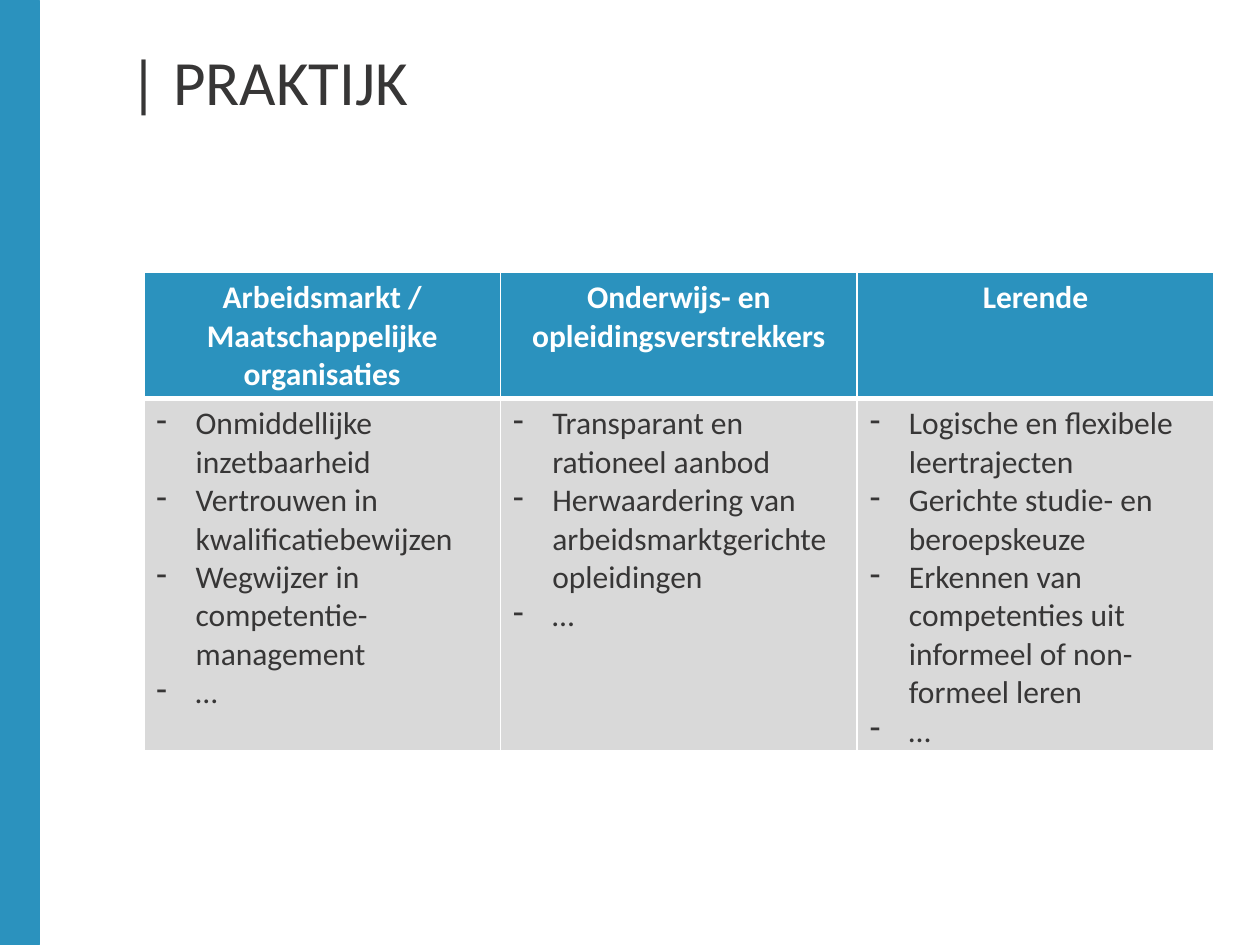
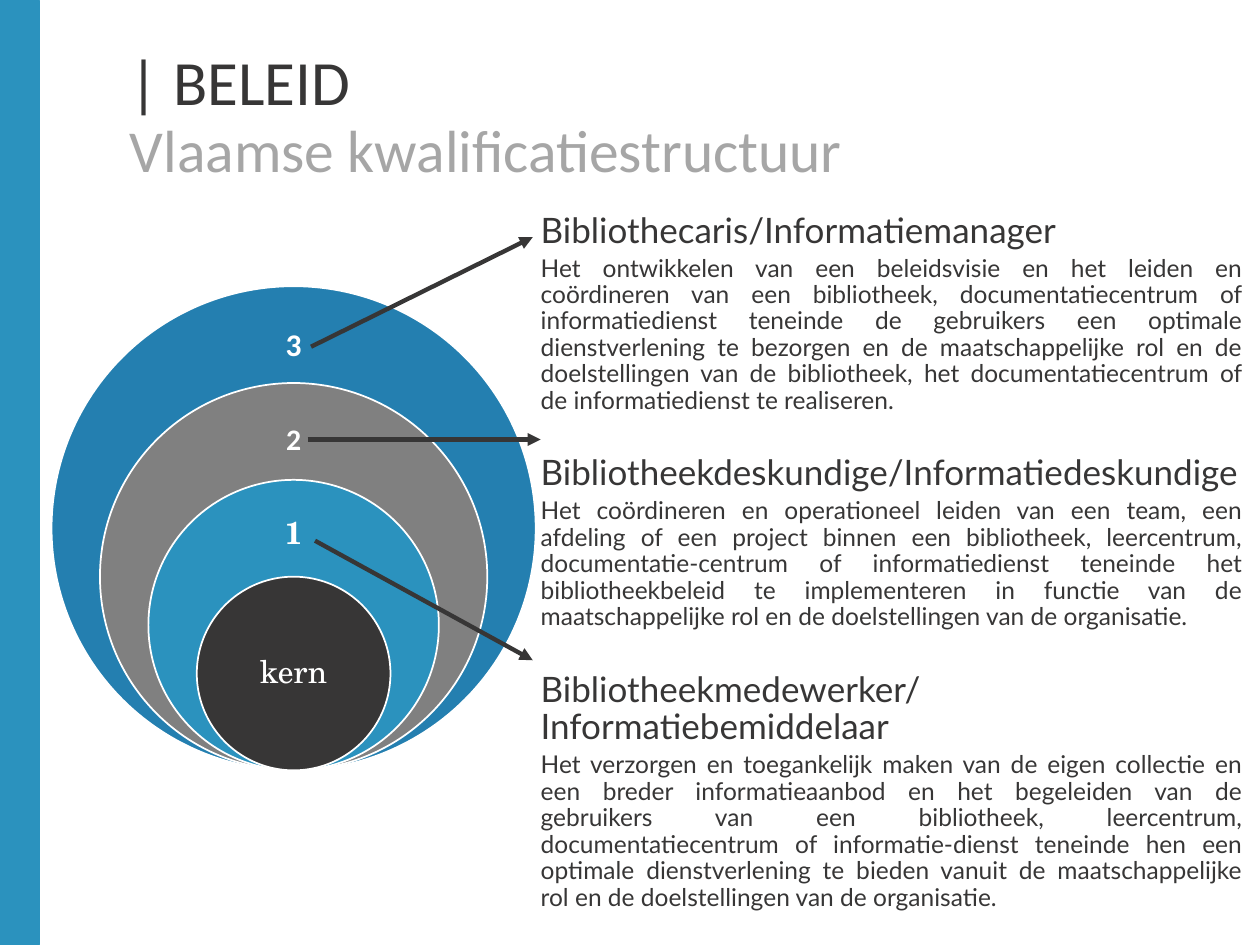
import lxml.etree
import pptx
import pptx.dml.color
import pptx.enum.shapes
import pptx.enum.text
import pptx.oxml.ns
import pptx.util

Cm, Pt = pptx.util.Cm, pptx.util.Pt
ALIGN = pptx.enum.text.PP_ALIGN
ANCHOR = pptx.enum.text.MSO_ANCHOR
SHAPE = pptx.enum.shapes.MSO_SHAPE
qn = pptx.oxml.ns.qn
rgb = pptx.dml.color.RGBColor.from_string

BLUE, DARK, WHITE = "2B92BE", "373636", "FFFFFF"
LIGHT_GREY, SUBTITLE_GREY = "D9D9D9", "A6A6A6"


def set_font(font, name, size, color, bold=False):
    font.name, font.size, font.bold = name, Pt(size), bold
    font.color.rgb = rgb(color)


def add_text_frame(slide, left, top, width, height, margin=0):
    """Add a wrapping text box, measured in cm, and return its text frame."""
    box = slide.shapes.add_textbox(Cm(left), Cm(top), Cm(width), Cm(height))
    frame = box.text_frame
    frame.word_wrap = True
    frame.margin_left = frame.margin_right = Cm(margin)
    frame.margin_top = frame.margin_bottom = Cm(margin)
    return frame


presentation = pptx.Presentation()
presentation.slide_width, presentation.slide_height = Cm(25.4), Cm(19.05)

# Shared side band and title
slides = []
for title, subtitle in [("| PRAKTIJK", None), ("| BELEID", "Vlaamse kwalificatiestructuur")]:
    slide = presentation.slides.add_slide(presentation.slide_layouts[6])
    slides.append(slide)
    band = slide.shapes.add_shape(SHAPE.RECTANGLE, 0, 0, Cm(0.79), presentation.slide_height)
    band.shadow.inherit = False
    band.fill.solid()
    band.fill.fore_color.rgb = band.line.color.rgb = rgb(BLUE)
    band.line.width = Pt(0.5)

    paragraph = add_text_frame(slide, 2.62, 1.04, 21.64, 3.1).paragraphs[0]
    paragraph.line_spacing = Pt(38)
    run = paragraph.add_run()
    run.text = title
    set_font(run.font, "Calibri", 36, DARK)
    if subtitle:
        paragraph.add_line_break()
        run = paragraph.add_run()
        run.text = subtitle
        set_font(run.font, "Calibri", 34, SUBTITLE_GREY)

practice_slide, policy_slide = slides

# Practice: benefits per target group
benefits = {
    "Arbeidsmarkt / Maatschappelijke organisaties": [
        "Onmiddellijke inzetbaarheid",
        "Vertrouwen in kwalificatiebewijzen",
        "Wegwijzer in competentie-management",
        "…",
    ],
    "Onderwijs- en opleidingsverstrekkers": [
        "Transparant en rationeel aanbod",
        "Herwaardering van arbeidsmarktgerichte opleidingen",
        "…",
    ],
    "Lerende": [
        "Logische en flexibele leertrajecten",
        "Gerichte studie- en beroepskeuze",
        "Erkennen van competenties uit informeel of non-formeel leren",
        "…",
    ],
}
table = practice_slide.shapes.add_table(
    2, len(benefits), Cm(2.9), Cm(5.49), Cm(21.57), Cm(8.76)).table
table.rows[0].height, table.rows[1].height = Cm(1.93), Cm(6.83)
for column, (group, items) in enumerate(benefits.items()):
    table.columns[column].width = Cm(7.19)
    for row, texts in enumerate([[group], items]):
        is_header = row == 0
        cell = table.cell(row, column)
        cell.text = "\n".join(texts)
        properties = cell._tc.get_or_add_tcPr()
        for side in "LRTB":
            thick = side == ("B" if is_header else "T")
            border = lxml.etree.SubElement(
                properties, qn("a:ln" + side), w=str(Pt(3 if thick else 1)))
            border_fill = lxml.etree.SubElement(border, qn("a:solidFill"))
            lxml.etree.SubElement(border_fill, qn("a:srgbClr"), val=WHITE)
        cell.fill.solid()
        cell.fill.fore_color.rgb = rgb(BLUE if is_header else LIGHT_GREY)
        for paragraph in cell.text_frame.paragraphs:
            if is_header:
                paragraph.alignment = ALIGN.CENTER
            else:
                paragraph_properties = paragraph._p.get_or_add_pPr()
                paragraph_properties.set("marL", str(Cm(0.79)))
                paragraph_properties.set("indent", str(-Cm(0.79)))
                lxml.etree.SubElement(paragraph_properties, qn("a:buChar"), char="-")
            set_font(paragraph.font, "Calibri", 18, WHITE if is_header else DARK, is_header)

# Policy: job profiles
profiles = [
    ("Bibliothecaris/Informatiemanager",
     "Het ontwikkelen van een beleidsvisie en het leiden en coördineren van een bibliotheek, "
     "documentatiecentrum of informatiedienst teneinde de gebruikers een optimale "
     "dienstverlening te bezorgen en de maatschappelijke rol en de doelstellingen van de "
     "bibliotheek, het documentatiecentrum of de informatiedienst te realiseren."),
    ("Bibliotheekdeskundige/Informatiedeskundige",
     "Het coördineren en operationeel leiden van een team, een afdeling of een project binnen "
     "een bibliotheek, leercentrum, documentatie-centrum of informatiedienst teneinde het "
     "bibliotheekbeleid te implementeren in functie van de maatschappelijke rol en de "
     "doelstellingen van de organisatie."),
    ("Bibliotheekmedewerker/Informatiebemiddelaar",
     "Het verzorgen en toegankelijk maken van de eigen collectie en een breder "
     "informatieaanbod en het begeleiden van de gebruikers van een bibliotheek, leercentrum, "
     "documentatiecentrum of informatie-dienst teneinde hen een optimale dienstverlening te "
     "bieden vanuit de maatschappelijke rol en de doelstellingen van de organisatie."),
]
frame = add_text_frame(policy_slide, 10.9, 4.29, 14.15, 12.7)
for index, (job, description) in enumerate(profiles):
    for text, size, space in [(job, 20, 23.3 if index else 0), (description, 14, 3)]:
        is_first = index == 0 and text == job
        paragraph = frame.paragraphs[0] if is_first else frame.add_paragraph()
        paragraph.text = text
        paragraph.alignment = ALIGN.JUSTIFY
        paragraph.line_spacing = 0.9
        paragraph.space_before = Pt(space)
        set_font(paragraph.font, "Lato", size, DARK)

# Policy: nested circles resting on one point
CENTER_X, BOTTOM, OUTER_DIAMETER = 5.92, 15.53, 9.76
LABEL_WIDTH, LABEL_HEIGHT = 2.75, 1.42
circles = [
    ("3", "247FB0", "Calibri", 18, True, 6.99),
    ("2", "808080", "Calibri", 17, True, 8.88),
    ("1", BLUE, "TeX Gyre Schola", 18, True, 10.77),
    ("kern", DARK, "TeX Gyre Schola", 18, False, 13.58),
]
for index, (label, color, font_name, size, bold, label_y) in enumerate(circles):
    diameter = OUTER_DIAMETER * (1 - 0.2 * index)
    circle = policy_slide.shapes.add_shape(
        SHAPE.OVAL, Cm(CENTER_X - diameter / 2), Cm(BOTTOM - diameter), Cm(diameter), Cm(diameter))
    circle.shadow.inherit = False
    circle.fill.solid()
    circle.fill.fore_color.rgb = rgb(color)
    circle.line.color.rgb = rgb(WHITE)
    circle.line.width = Pt(1)

    frame = add_text_frame(policy_slide, CENTER_X - LABEL_WIDTH / 2, label_y - LABEL_HEIGHT / 2,
                           LABEL_WIDTH, LABEL_HEIGHT, margin=0.35)
    frame.vertical_anchor = ANCHOR.MIDDLE
    paragraph = frame.paragraphs[0]
    paragraph.text = label
    paragraph.alignment = ALIGN.CENTER
    paragraph.line_spacing = 0.9
    set_font(paragraph.font, font_name, size, WHITE, bold)

# Policy: arrows from circle to profile
arrows = [(6.35, 10.9, 10.74, 13.31), (6.2, 8.86, 10.9, 8.86), (6.27, 6.99, 10.74, 4.78)]
for ends in arrows:
    arrow = policy_slide.shapes.add_connector(
        pptx.enum.shapes.MSO_CONNECTOR.STRAIGHT, *map(Cm, ends))
    arrow.line.color.rgb = rgb(DARK)
    arrow.line.width = Pt(2.5)
    lxml.etree.SubElement(arrow.line._get_or_add_ln(), qn("a:tailEnd"), type="triangle")
    lxml.etree.SubElement(arrow._element.spPr, qn("a:effectLst"))

presentation.save("out.pptx")
